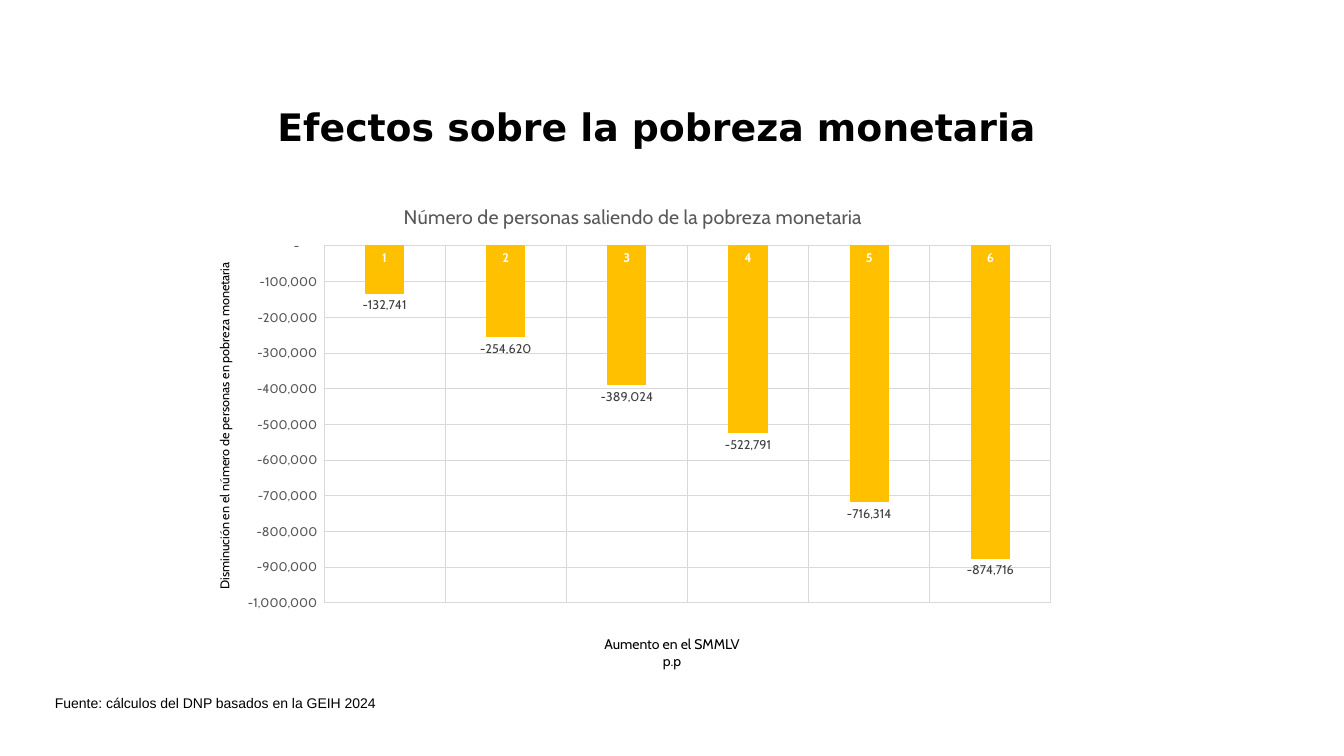
from pptx import Presentation
from pptx.chart.data import CategoryChartData
from pptx.dml.color import RGBColor
from pptx.enum.chart import XL_CHART_TYPE as ChartType, XL_LABEL_POSITION as LabelPosition, XL_TICK_MARK as TickMark
from pptx.enum.text import MSO_ANCHOR as Anchor, PP_ALIGN as Align
from pptx.oxml import parse_xml
from pptx.oxml.ns import nsdecls, qn
from pptx.util import Emu, Pt

PX = 914400 / 100.8
CHART_LEFT, CHART_TOP, CHART_WIDTH, CHART_HEIGHT = 190, 179, 880, 440
GRID = "D9D9D9"
GOLD = "FFC000"


def style(font, size, name, color, bold=False):
    font.size = Pt(size)
    font.name = name
    font.bold = bold
    font.color.rgb = RGBColor.from_string(color)


def place(element, index, left, top, width=None, height=None):
    for layout in element.findall(qn("c:layout")):
        element.remove(layout)
    values = [("x", (left - CHART_LEFT) / CHART_WIDTH), ("y", (top - CHART_TOP) / CHART_HEIGHT)]
    modes = '<c:xMode val="edge"/><c:yMode val="edge"/>'
    if width:
        modes = '<c:layoutTarget val="inner"/>' + modes
        values += [("w", width / CHART_WIDTH), ("h", height / CHART_HEIGHT)]
    sizes = "".join(f'<c:{name} val="{value:.4f}"/>' for name, value in values)
    element.insert(index, parse_xml(
        f'<c:layout {nsdecls("c")}><c:manualLayout>{modes}{sizes}</c:manualLayout></c:layout>'))


presentation = Presentation()
presentation.slide_width = Emu(round(1344 * PX))
presentation.slide_height = Emu(round(756 * PX))
slide = presentation.slides.add_slide(presentation.slide_layouts[6])

texts = [
    ("Efectos sobre la pobreza monetaria", (77, 99, 1159, 55), 27, "DejaVu Sans", True, Align.CENTER),
    ("Fuente: cálculos del DNP basados en la GEIH 2024", (45, 688, 1174, 30), 10, "Arial", False, Align.LEFT),
    ("Aumento en el SMMLV\np.p", (580, 630, 184, 44), 10, "Cabin", False, Align.CENTER),
]
for text, box, size, font_name, bold, alignment in texts:
    shape = slide.shapes.add_textbox(*[Emu(round(value * PX)) for value in box])
    text_frame = shape.text_frame
    text_frame.word_wrap = True
    text_frame.vertical_anchor = Anchor.MIDDLE
    text_frame.text = text
    for paragraph in text_frame.paragraphs:
        paragraph.alignment = alignment
        style(paragraph.runs[0].font, size, font_name, "000000", bold)

chart_data = CategoryChartData()
chart_data.categories = ["1", "2", "3", "4", "5", "6"]
chart_data.add_series("Series 1", [-132741, -254620, -389024, -522791, -716314, -874716])
chart_box = [Emu(round(value * PX)) for value in (CHART_LEFT, CHART_TOP, CHART_WIDTH, CHART_HEIGHT)]
chart = slide.shapes.add_chart(ChartType.COLUMN_CLUSTERED, *chart_box, chart_data).chart
style(chart.font, 10, "Cabin", "000000")
chart.has_legend = False

category_axis, value_axis = chart.category_axis, chart.value_axis
for axis, color, bold in [(category_axis, "FFFFFF", True), (value_axis, "595959", False)]:
    axis.major_tick_mark = axis.minor_tick_mark = TickMark.NONE
    axis.has_major_gridlines = True
    axis.major_gridlines.format.line.color.rgb = RGBColor.from_string(GRID)
    axis.major_gridlines.format.line.width = Pt(0.75)
    style(axis.tick_labels.font, 9, "Cabin", color, bold)
category_axis.format.line.color.rgb = RGBColor.from_string(GRID)
category_axis.format.line.width = Pt(0.75)
value_axis.format.line.fill.background()
value_axis.minimum_scale = -1000000
value_axis.maximum_scale = 0
value_axis.major_unit = 100000
value_axis.tick_labels.number_format = '_-* #,##0_-;\\-* #,##0_-;_-* "-"??_-;_-@_'
value_axis.tick_labels.number_format_is_linked = False

titles = [
    (chart.chart_title, "Número de personas saliendo de la pobreza monetaria", 14, "595959", 400, 200),
    (value_axis.axis_title, "Disminución en el número de personas en pobreza monetaria", 9, "000000", 213, 260),
]
for title, text, size, color, left, top in titles:
    title.text_frame.text = text
    style(title.text_frame.paragraphs[0].runs[0].font, size, "Cabin", color)
    place(title._element, 1, left, top)
value_axis.axis_title.text_frame._txBody.bodyPr.set("rot", "-5400000")
place(chart._chartSpace.chart.plotArea, 0, 324, 246, 727, 357)

plot = chart.plots[0]
plot.gap_width = 219
plot.overlap = -27
plot.vary_by_categories = False
series = plot.series[0]
series.invert_if_negative = False
series.format.fill.solid()
series.format.fill.fore_color.rgb = RGBColor.from_string(GOLD)
series.format.line.color.rgb = RGBColor.from_string(GOLD)
series.format.line.width = Pt(0.75)
labels = series.data_labels
labels.show_value = True
labels.position = LabelPosition.OUTSIDE_END
labels.number_format = "#,##0"
labels.number_format_is_linked = False
style(labels.font, 9, "Cabin", "404040")

presentation.save("out.pptx")
